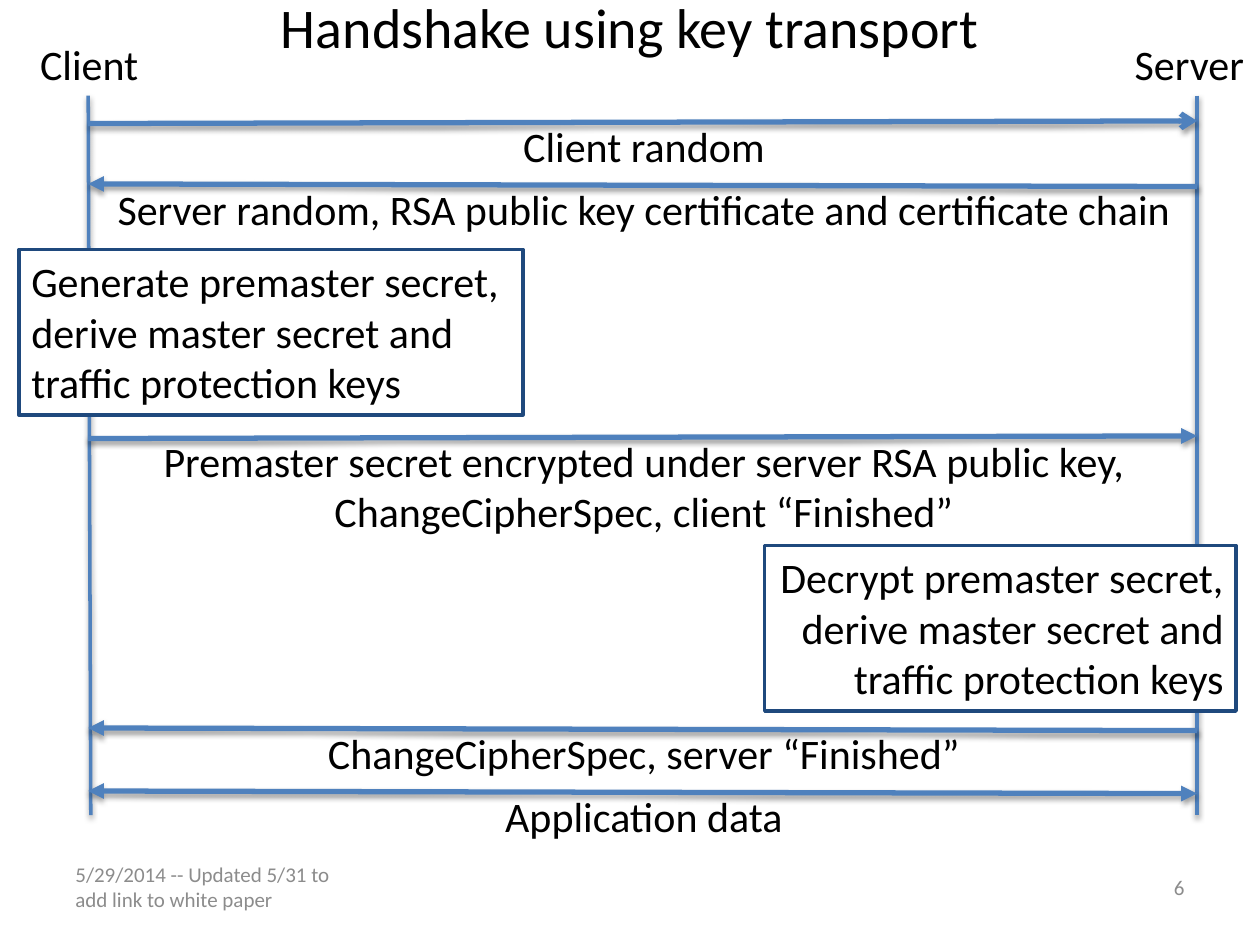
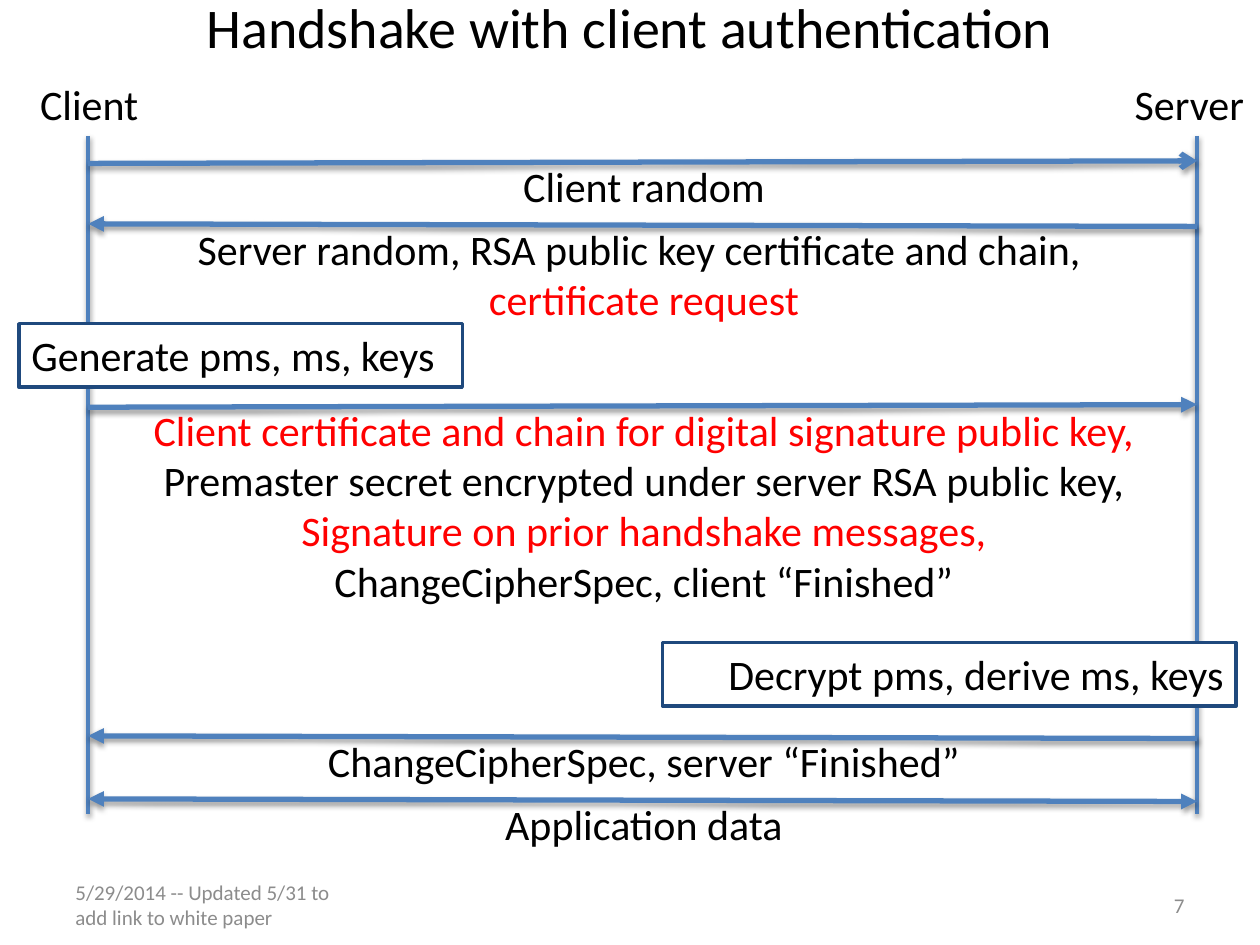
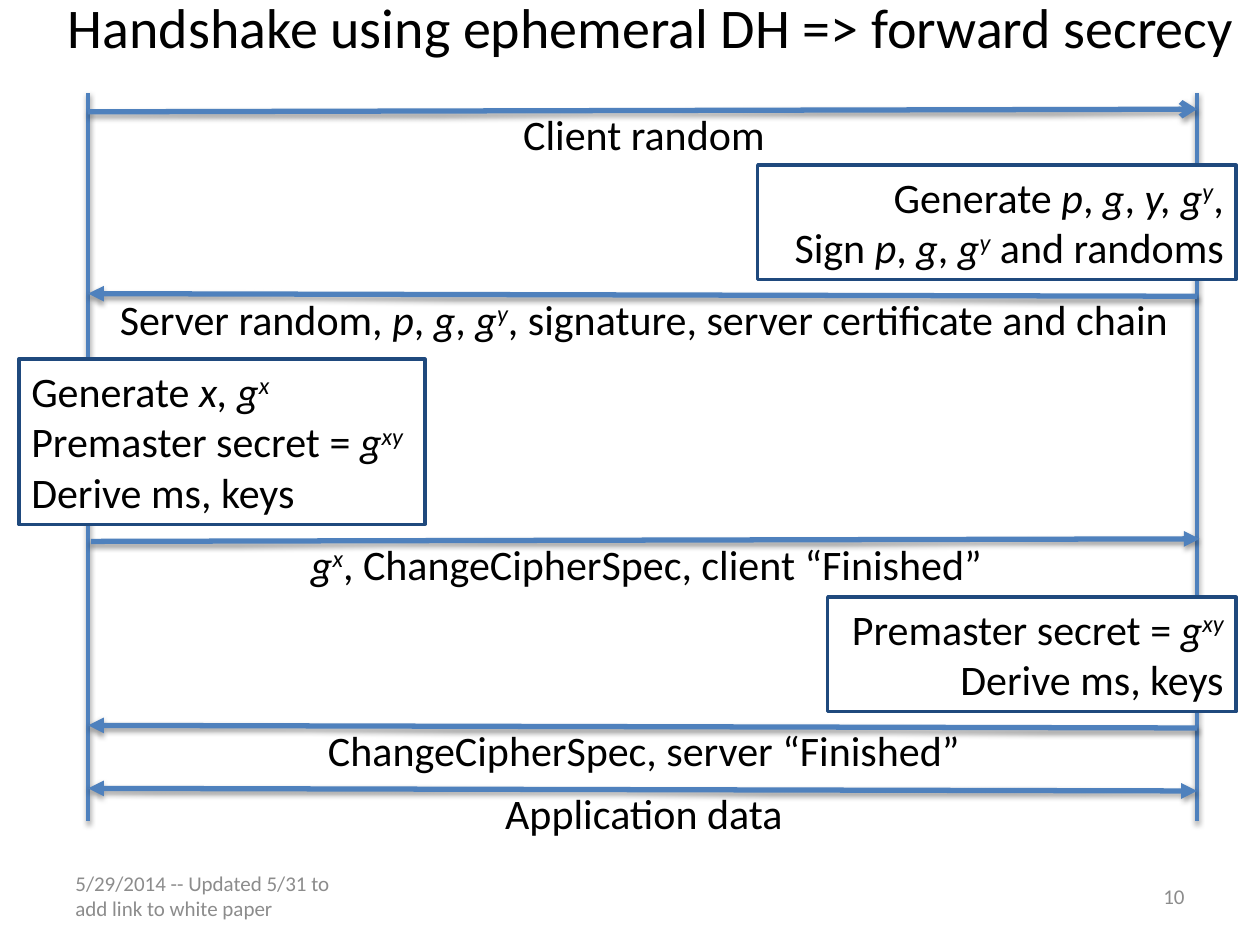
"""Build three TLS handshake sequence diagrams."""
from dataclasses import dataclass
from typing import NamedTuple

from lxml.etree import SubElement
from pptx import Presentation
from pptx.dml.color import RGBColor
from pptx.enum.shapes import MSO_CONNECTOR, MSO_SHAPE
from pptx.enum.text import MSO_ANCHOR, MSO_AUTO_SIZE, PP_ALIGN
from pptx.oxml.ns import qn
from pptx.shapes.connector import Connector
from pptx.slide import Slide
from pptx.text.text import TextFrame
from pptx.util import Pt

COLOURS = {
    "text": "000000",
    "added": "FF0000",
    "footer": "8C8C8C",
    "arrow": "4F81BD",
    "box_line": "1F497D",
    "box_fill": "FFFFFF",
    "shadow": "000000",
}
FONT = "Calibri"
TITLE_SIZE, BODY_SIZE, FOOTER_SIZE = 32, 24, 12
CLIENT_X, SERVER_X = 50.4, 684
CLIENT_EDGE, SERVER_EDGE = 10.8, 706.4
ARROW_RISE = 1.5
CAPTION_RISE = 5.3
CAPTION_INSET = 1.5
CLOSING_GAP = 36
FOOTER_TEXT = "5/29/2014 -- Updated 5/31 to add link to white paper"


class Run(NamedTuple):
    text: str
    italic: bool = False
    raised: bool = False
    colour: str = "text"


Lines = tuple[tuple[Run, ...], ...]


class Area(NamedTuple):
    left: float
    top: float
    width: float
    height: float


@dataclass(frozen=True)
class Message:
    y: float
    caption: Lines
    to_server: bool = False
    head: str | None = None
    tail: str = "triangle"
    shift: float = 0


@dataclass(frozen=True)
class Step:
    at_server: bool
    top: float
    width: float
    rows: int
    lines: Lines


@dataclass(frozen=True)
class Handshake:
    title: str
    number: int
    footer_top: float
    life_top: float
    life_bottom: float
    opening_y: float
    messages: tuple[Message, ...]
    closing_y: float
    steps: tuple[Step, ...]
    labelled: bool = True
    foot_shift: float = 0
    title_left: float = 36
    title_width: float = 648


def plain(*texts: str) -> Lines:
    return tuple((Run(text),) for text in texts)


def var(name: str) -> Run:
    return Run(name, italic=True)


def power(exponent: str) -> tuple[Run, Run]:
    return var("g"), Run(exponent, italic=True, raised=True)


COMMA = Run(", ")
SHARED_SECRET = (Run("Premaster secret = "), *power("xy"))
DERIVE = (Run("Derive ms, keys"),)
ENCRYPTED_SECRET = "Premaster secret encrypted under server RSA public key,"
CLIENT_FINISHED = "ChangeCipherSpec, client “Finished”"

HANDSHAKES = (
    Handshake(
        "Handshake using key transport", 6, 492.5, 54.7, 465.8, 70.6,
        (
            Message(106.6, plain("Server random, RSA public key certificate and certificate chain")),
            Message(250.6, plain(ENCRYPTED_SECRET, CLIENT_FINISHED), to_server=True),
        ),
        417.5,
        (
            Step(False, 142.6, 288, 3,
                 plain("Generate premaster secret, derive master secret and traffic protection keys")),
            Step(True, 311.8, 269.4, 3,
                 plain("Decrypt premaster secret, derive master secret and traffic protection keys")),
        ),
        foot_shift=1.5,
    ),
    Handshake(
        "Handshake with client authentication", 7, 502.6, 77.6, 465.1, 93.4,
        (
            Message(129.4, (
                (Run("Server random, RSA public key certificate and chain, "),),
                (Run("certificate request", colour="added"),),
            )),
            Message(232.7, (
                (Run("Client certificate and chain for digital signature public key,", colour="added"),),
                (Run(ENCRYPTED_SECRET),),
                (Run("Signature on prior handshake messages,", colour="added"),),
                (Run(CLIENT_FINISHED),),
            ), to_server=True),
        ),
        422,
        (
            Step(False, 185, 253.4, 1, plain("Generate pms, ms, keys")),
            Step(True, 367.2, 327.8, 1, plain("Decrypt pms, derive ms, keys")),
        ),
    ),
    Handshake(
        "Handshake using ephemeral DH => forward secrecy", 10, 497.5, 53.3, 469.4, 63.9,
        (
            Message(169.3, ((
                Run("Server random, "), var("p"), COMMA, var("g"), COMMA, *power("y"),
                Run(", signature, server certificate and chain"),
            ),)),
            Message(309.4, ((*power("x"), Run(", " + CLIENT_FINISHED)),), to_server=True, shift=1.5),
        ),
        416,
        (
            Step(False, 205.2, 232, 3, (
                (Run("Generate "), var("x, "), *power("x")), SHARED_SECRET, DERIVE,
            )),
            Step(True, 341.3, 233.4, 2, (SHARED_SECRET, DERIVE)),
            Step(True, 94.4, 273.4, 2, (
                (Run("Generate "), var("p"), COMMA, var("g"), COMMA, var("y, "), *power("y"), Run(",")),
                (Run("Sign "), var("p"), COMMA, var("g"), COMMA, *power("y"), Run(" and randoms")),
            )),
        ),
        labelled=False, title_left=24, title_width=696,
    ),
)


def rgb(name: str) -> RGBColor:
    return RGBColor.from_string(COLOURS[name])


def text_height(rows: int) -> float:
    return 7.2 + 29.1 * rows


def fill_text(frame: TextFrame, lines: Lines, size: float, align: PP_ALIGN,
              anchor: MSO_ANCHOR = MSO_ANCHOR.TOP) -> None:
    frame.word_wrap = True
    frame.vertical_anchor = anchor
    frame.auto_size = MSO_AUTO_SIZE.SHAPE_TO_FIT_TEXT if anchor == MSO_ANCHOR.TOP else MSO_AUTO_SIZE.NONE
    for index, line in enumerate(lines):
        paragraph = frame.add_paragraph() if index else frame.paragraphs[0]
        paragraph.alignment = align
        for part in line:
            run = paragraph.add_run()
            run.text = part.text
            run.font.name = FONT
            run.font.size = Pt(size)
            run.font.italic = part.italic
            run.font.color.rgb = rgb(part.colour)
            if part.raised:
                run._r.get_or_add_rPr().set("baseline", "30000")


def add_text(shapes, area: Area, lines: Lines, size: float, align: PP_ALIGN,
             anchor: MSO_ANCHOR = MSO_ANCHOR.TOP) -> None:
    box = shapes.add_textbox(*map(Pt, area))
    fill_text(box.text_frame, lines, size, align, anchor)


def add_shadow(connector: Connector) -> None:
    effects = SubElement(connector.element.spPr, qn("a:effectLst"))
    shadow = SubElement(effects, qn("a:outerShdw"), blurRad=str(Pt(3.1)), dist=str(Pt(1.6)),
                        dir="5400000", rotWithShape="0")
    colour = SubElement(shadow, qn("a:srgbClr"), val=COLOURS["shadow"])
    SubElement(colour, qn("a:alpha"), val="38000")


def add_line(shapes, start: tuple[float, float], end: tuple[float, float], weight: float,
             head: str | None = None, tail: str | None = None) -> None:
    connector = shapes.add_connector(MSO_CONNECTOR.STRAIGHT, *map(Pt, (*start, *end)))
    connector.line.color.rgb = rgb("arrow")
    connector.line.width = Pt(weight)
    outline = connector.element.spPr.find(qn("a:ln"))
    for tag, kind in (("a:headEnd", head), ("a:tailEnd", tail)):
        if kind:
            SubElement(outline, qn(tag), type=kind)
    add_shadow(connector)


def add_message(slide: Slide, message: Message) -> None:
    shapes = slide.shapes.add_group_shape().shapes
    client, server = CLIENT_X + message.shift, SERVER_X + message.shift
    start, end = (client, server) if message.to_server else (server, client)
    add_line(shapes, (start, message.y), (end, message.y - ARROW_RISE), 3, message.head, message.tail)
    left = client + CAPTION_INSET
    area = Area(left, message.y - CAPTION_RISE, server - left, text_height(len(message.caption)))
    add_text(shapes, area, message.caption, BODY_SIZE, PP_ALIGN.CENTER)


def add_step(slide: Slide, step: Step) -> None:
    left = SERVER_EDGE - step.width if step.at_server else CLIENT_EDGE
    area = Area(left, step.top, step.width, text_height(step.rows))
    box = slide.shapes.add_shape(MSO_SHAPE.RECTANGLE, *map(Pt, area))
    box.shadow.inherit = False
    box.fill.solid()
    box.fill.fore_color.rgb = rgb("box_fill")
    box.line.color.rgb = rgb("box_line")
    box.line.width = Pt(2)
    fill_text(box.text_frame, step.lines, BODY_SIZE,
              PP_ALIGN.RIGHT if step.at_server else PP_ALIGN.LEFT)


def add_frame(slide: Slide, handshake: Handshake) -> None:
    add_text(slide.shapes, Area(handshake.title_left, -30, handshake.title_width, 90),
             plain(handshake.title), TITLE_SIZE, PP_ALIGN.CENTER, MSO_ANCHOR.MIDDLE)
    for left, text, align in ((36, FOOTER_TEXT, PP_ALIGN.LEFT),
                              (516, str(handshake.number), PP_ALIGN.RIGHT)):
        add_text(slide.shapes, Area(left, handshake.footer_top, 168, 28.8),
                 ((Run(text, colour="footer"),),), FOOTER_SIZE, align, MSO_ANCHOR.MIDDLE)


def add_lifelines(slide: Slide, handshake: Handshake) -> None:
    if handshake.labelled:
        height = text_height(1)
        for left, role, align in ((15.8, "Client", PP_ALIGN.LEFT), (625.7, "Server", PP_ALIGN.RIGHT)):
            add_text(slide.shapes, Area(left, handshake.life_top - height, 92.2, height),
                     plain(role), BODY_SIZE, align)
    for x, foot_x in ((CLIENT_X, CLIENT_X + handshake.foot_shift), (SERVER_X, SERVER_X)):
        add_line(slide.shapes, (x, handshake.life_top), (foot_x, handshake.life_bottom), 2)


def add_handshake(slide: Slide, handshake: Handshake) -> None:
    add_frame(slide, handshake)
    add_lifelines(slide, handshake)
    opening = Message(handshake.opening_y, plain("Client random"), to_server=True, tail="arrow")
    finished = Message(handshake.closing_y, plain("ChangeCipherSpec, server “Finished”"))
    data = Message(handshake.closing_y + CLOSING_GAP, plain("Application data"), head="triangle")
    for message in (opening, *handshake.messages, finished, data):
        add_message(slide, message)
    for step in handshake.steps:
        add_step(slide, step)


def main() -> None:
    deck = Presentation()
    deck.slide_width, deck.slide_height = Pt(720), Pt(540)
    blank = deck.slide_layouts[6]
    for handshake in HANDSHAKES:
        add_handshake(deck.slides.add_slide(blank), handshake)
    deck.save("out.pptx")


if __name__ == "__main__":
    main()
